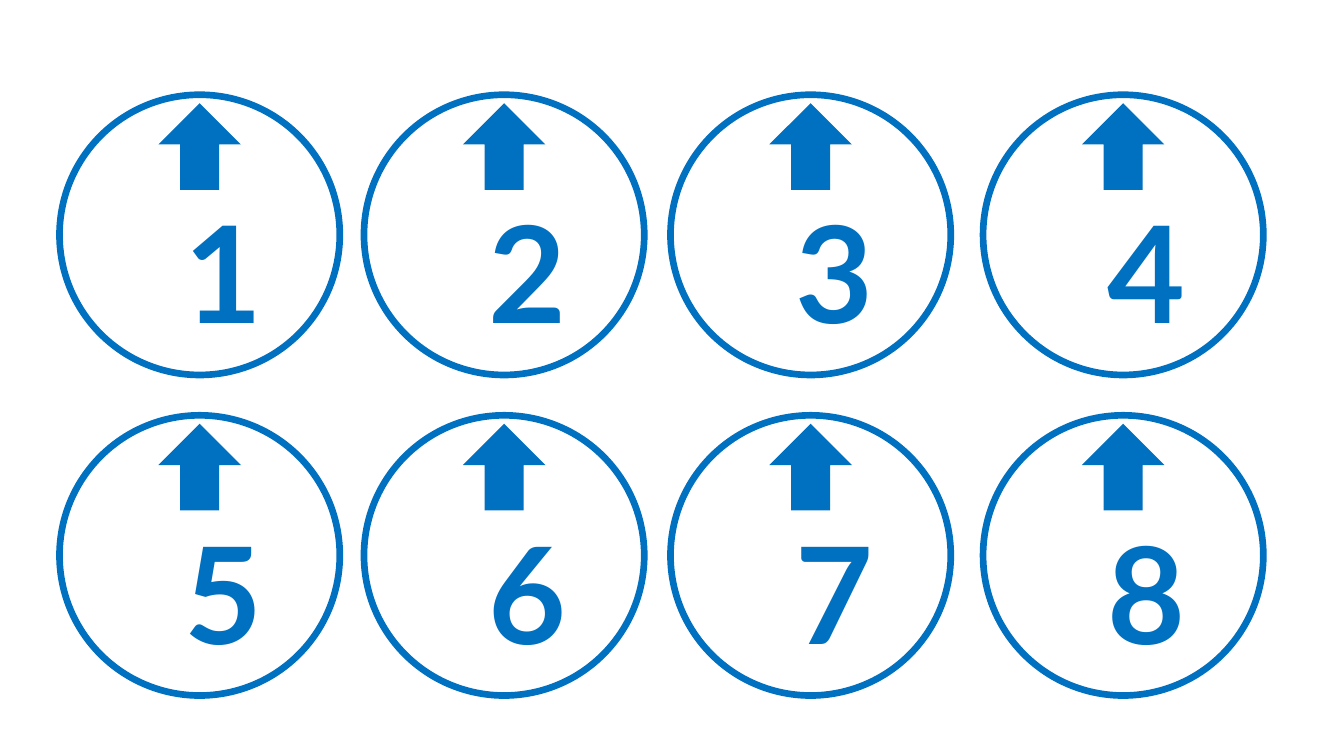
from dataclasses import dataclass

from lxml import etree
from pptx import Presentation
from pptx.dml.color import RGBColor
from pptx.enum import shapes, text
from pptx.oxml import ns
from pptx.util import Inches, Pt


@dataclass(frozen=True)
class Theme:
    blue: RGBColor = RGBColor(0x00, 0x70, 0xC0)
    font: str = "Lato"
    number_size: Pt = Pt(96)
    ring_width: Pt = Pt(4.75)
    arrow_outline: Pt = Pt(7.75)


THEME = Theme()
COLUMN_LEFTS = (0.59, 3.61, 6.65, 9.75)
ROW_TOPS = (0.94, 4.12)
DIAMETER = 2.78


def add_ring(group, left, top):
    ring = group.shapes.add_shape(
        shapes.MSO_SHAPE.OVAL,
        Inches(left), Inches(top), Inches(DIAMETER), Inches(DIAMETER),
    )
    ring.shadow.inherit = False
    ring.fill.background()
    ring.line.color.rgb = THEME.blue
    ring.line.width = THEME.ring_width


def add_up_arrow(group, left, top):
    arrow = group.shapes.add_shape(
        shapes.MSO_SHAPE.UP_ARROW,
        Inches(left), Inches(top), Inches(0.56), Inches(0.73),
    )
    arrow.shadow.inherit = False
    arrow.fill.solid()
    arrow.fill.fore_color.rgb = THEME.blue
    arrow.line.color.rgb = THEME.blue
    arrow.line.width = THEME.arrow_outline
    outline = arrow.element.spPr.find(ns.qn("a:ln"))
    etree.SubElement(outline, ns.qn("a:miter"), lim="800000")


def add_number(group, left, top, number):
    box = group.shapes.add_textbox(
        Inches(left), Inches(top), Inches(0.51), Inches(1.72)
    )
    frame = box.text_frame
    frame.word_wrap = True
    frame.auto_size = text.MSO_AUTO_SIZE.SHAPE_TO_FIT_TEXT
    paragraph = frame.paragraphs[0]
    paragraph.alignment = text.PP_ALIGN.CENTER
    run = paragraph.add_run()
    run.text = str(number)
    run.font.name = THEME.font
    run.font.size = THEME.number_size
    run.font.bold = True
    run.font.color.rgb = THEME.blue


def add_badge(slide, left, top, number):
    group = slide.shapes.add_group_shape()
    add_ring(group, left, top)
    add_up_arrow(group, left + 1.11, top + 0.16)
    add_number(group, left + 1.14, top + 0.89, number)


def main():
    presentation = Presentation()
    presentation.slide_width = Inches(13.33)
    presentation.slide_height = Inches(7.5)
    slide = presentation.slides.add_slide(
        presentation.slide_layouts.get_by_name("Blank")
    )
    positions = [(left, top) for top in ROW_TOPS for left in COLUMN_LEFTS]
    for number, (left, top) in enumerate(positions, start=1):
        add_badge(slide, left, top, number)
    presentation.save("out.pptx")


if __name__ == "__main__":
    main()
